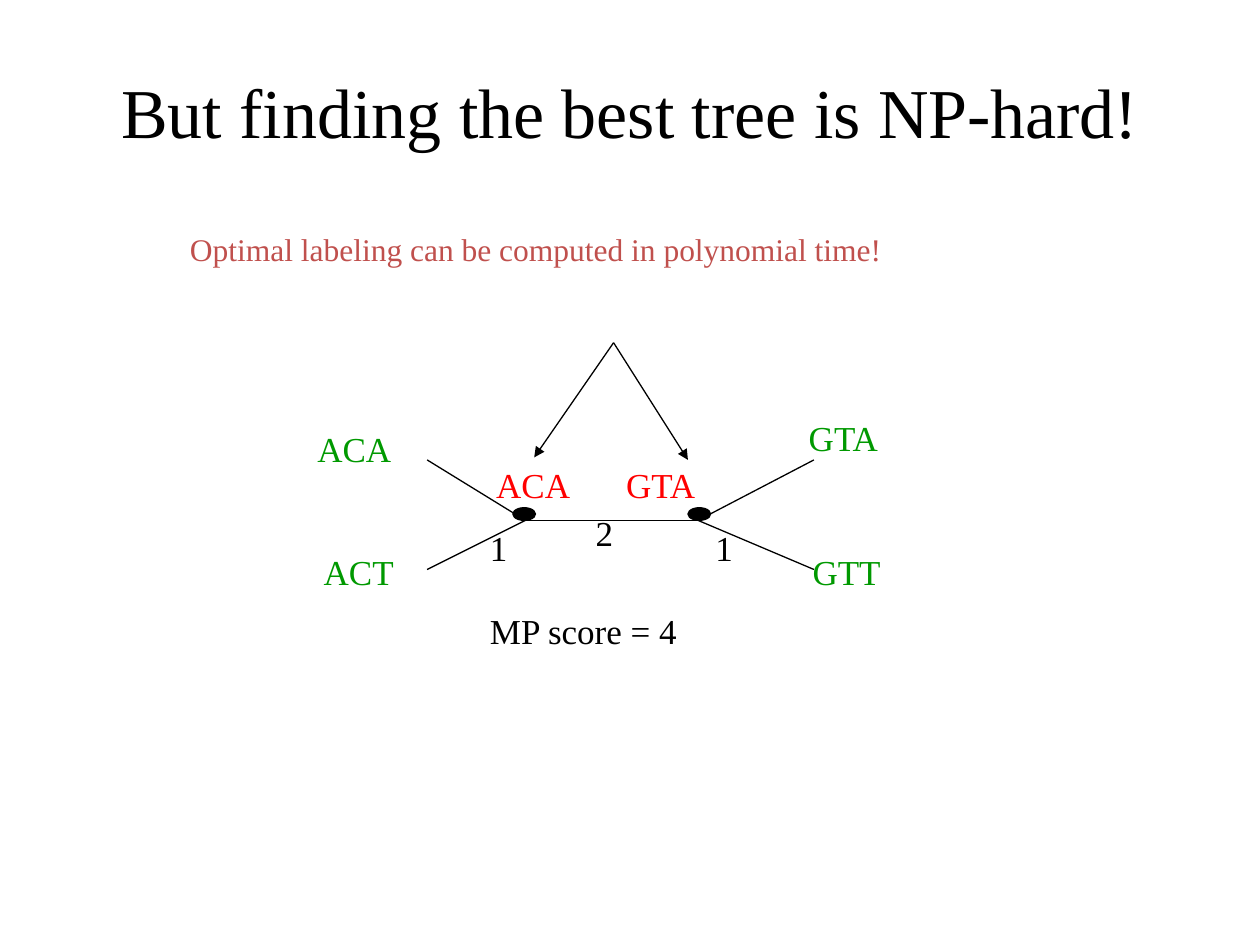
from lxml import etree
from pptx import Presentation
from pptx.dml.color import RGBColor
from pptx.enum.shapes import MSO_CONNECTOR as Connector, MSO_SHAPE as Shape
from pptx.enum.text import MSO_ANCHOR as Anchor, MSO_AUTO_SIZE as AutoSize, PP_ALIGN as Align
from pptx.oxml.ns import qn
from pptx.util import Inches, Pt

BLACK = RGBColor(0x00, 0x00, 0x00)
GREEN = RGBColor(0x00, 0x99, 0x00)
RED = RGBColor(0xFF, 0x00, 0x00)
BRICK = RGBColor(0xC0, 0x50, 0x4D)
FONT = "Times New Roman"
LABEL_HEIGHT = 0.43


def add_text(slide, text, box, size=20, color=BLACK, align=Align.LEFT,
             anchor=Anchor.TOP, wrap=False, grow=True):
    frame = slide.shapes.add_textbox(*map(Inches, box)).text_frame
    frame.word_wrap = wrap
    frame.auto_size = AutoSize.SHAPE_TO_FIT_TEXT if grow else AutoSize.NONE
    frame.vertical_anchor = anchor
    paragraph = frame.paragraphs[0]
    paragraph.alignment = align
    run = paragraph.add_run()
    run.text = text
    run.font.name, run.font.size = FONT, Pt(size)
    run.font.color.rgb = color


def add_line(slide, start, end, arrow=False):
    line = slide.shapes.add_connector(Connector.STRAIGHT, *map(Inches, start + end))
    line.line.color.rgb = BLACK
    line.line.width = Pt(0.75)
    if arrow:
        etree.SubElement(line.line._get_or_add_ln(), qn("a:tailEnd"), type="triangle")
    etree.SubElement(line._element.spPr, qn("a:effectLst"))


def add_node(slide, box):
    node = slide.shapes.add_shape(Shape.OVAL, *map(Inches, box))
    node.shadow.inherit = False
    node.fill.solid()
    node.fill.fore_color.rgb = BLACK
    node.line.color.rgb = BLACK
    node.line.width = Pt(0.75)


def add_heading(slide, box):
    add_text(slide, "But finding the best tree is NP-hard!", box, size=40,
             align=Align.CENTER, anchor=Anchor.MIDDLE, wrap=True, grow=False)


def add_claim(slide, box):
    add_text(slide, "Optimal labeling can be computed in polynomial time!", box,
             size=18, color=BRICK, wrap=True)


def add_tree(slide, box):
    """Draw the labelled four-leaf tree; its parts are offsets within the box."""
    left, top, width, height = box

    def at(x, y):
        return left + x, top + y

    # Branches from each inner node to its two leaves, and the edge between
    inner_left, inner_right = at(1.75, 1.41), at(3.12, 1.41)
    add_line(slide, inner_left, inner_right)
    for inner, leaf_x in ((inner_left, 0.97), (inner_right, 4.04)):
        for leaf_y in (1.8, 0.93):
            add_line(slide, inner, at(leaf_x, leaf_y))

    # Inner nodes
    for x in (1.65, 3.04):
        add_node(slide, (*at(x, 1.31), 0.18, 0.1))

    # Leaf sequences, inner labels, edge costs and score
    labels = [
        ("ACT", 0.05, 1.6, 0.77, GREEN),
        ("ACA", 0, 0.62, 0.8, GREEN),
        ("GTT", 3.93, 1.6, 0.75, GREEN),
        ("GTA", 3.9, 0.54, 0.78, GREEN),
        ("ACA", 1.42, 0.91, 0.8, RED),
        ("GTA", 2.45, 0.91, 0.78, RED),
        ("1", 1.37, 1.41, 0.34, BLACK),
        ("2", 2.21, 1.29, 0.34, BLACK),
        ("1", 3.16, 1.41, 0.34, BLACK),
        ("MP score = 4", 1.37, height - LABEL_HEIGHT, 1.71, BLACK),
    ]
    for text, x, y, label_width, color in labels:
        add_text(slide, text, (*at(x, y), label_width, LABEL_HEIGHT), color=color)

    # Arrows from the claim to the inner labels
    for tip in (at(1.82, 0.91), at(3.04, 0.93)):
        add_line(slide, at(2.45, 0), tip, arrow=True)


def main():
    deck = Presentation()
    deck.slide_width, deck.slide_height = Inches(10), Inches(7.5)
    slide = deck.slides.add_slide(deck.slide_layouts[6])
    add_heading(slide, (0.75, 0.25, 8.5, 1.25))
    add_tree(slide, (2.42, 2.72, 4.68, 2.5))
    add_claim(slide, (1.41, 1.78, 7, 0.4))
    deck.save("out.pptx")


if __name__ == "__main__":
    main()
